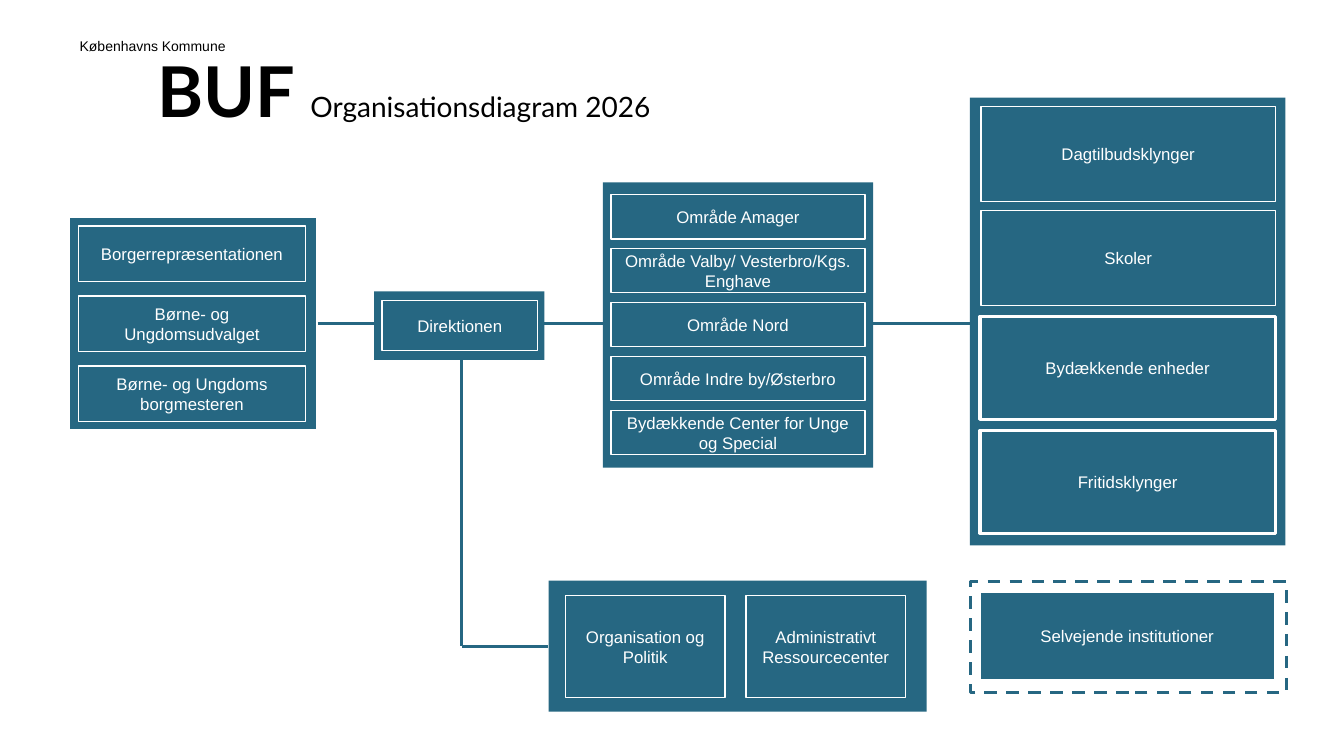
from lxml.etree import SubElement
from pptx import Presentation
from pptx.dml.color import RGBColor
from pptx.enum.dml import MSO_LINE
from pptx.enum.shapes import MSO_CONNECTOR, MSO_SHAPE
from pptx.enum.text import MSO_ANCHOR, PP_ALIGN
from pptx.oxml.ns import qn
from pptx.util import Emu, Pt

PX = 9144  # 100 px to the inch
TEAL = RGBColor(0x26, 0x67, 0x82)
WHITE = RGBColor(0xFF, 0xFF, 0xFF)
BLACK = RGBColor(0, 0, 0)


def px(*lengths):
    return [Emu(round(length * PX)) for length in lengths]


def add_box(slide, box, fill=TEAL, line=None, weight=1):
    rect = slide.shapes.add_shape(MSO_SHAPE.RECTANGLE, *px(*box))
    rect.shadow.inherit = False
    if fill is None:
        rect.fill.background()
    else:
        rect.fill.solid()
        rect.fill.fore_color.rgb = fill
    if line is None:
        rect.line.fill.background()
    else:
        rect.line.color.rgb = line
        rect.line.width = Pt(weight)
    return rect


def add_units(slide, box, size, labels, weight=1):
    """Spread equal labelled boxes evenly from one corner of box to the other."""
    left, top, width, height = box
    unit_width, unit_height = size
    gaps = max(len(labels) - 1, 1)
    step_x = (width - unit_width) / gaps
    step_y = (height - unit_height) / gaps
    for i, label in enumerate(labels):
        place = (left + i * step_x, top + i * step_y, unit_width, unit_height)
        unit = add_box(slide, place, line=WHITE, weight=weight)
        frame = unit.text_frame
        frame.word_wrap = True
        frame.vertical_anchor = MSO_ANCHOR.MIDDLE
        paragraph = frame.paragraphs[0]
        paragraph.text = label
        paragraph.alignment = PP_ALIGN.CENTER
        paragraph.font.name = "Arial"
        paragraph.font.size = Pt(12)
        paragraph.font.color.rgb = WHITE


def add_link(slide, start, end):
    link = slide.shapes.add_connector(MSO_CONNECTOR.STRAIGHT, *px(*start, *end))
    link.line.color.rgb = TEAL
    link.line.width = Pt(2.25)
    SubElement(link._element.spPr, qn("a:effectLst"))
    return link


def add_heading(slide, box, anchor, runs):
    frame = slide.shapes.add_textbox(*px(*box)).text_frame
    frame.margin_left = frame.margin_right = 0
    frame.margin_top = frame.margin_bottom = 0
    frame.word_wrap = True
    frame.vertical_anchor = anchor
    paragraph = frame.paragraphs[0]
    for text, font, size, bold in runs:
        run = paragraph.add_run()
        run.text = text
        run.font.name = font
        run.font.size = Pt(size)
        run.font.bold = bold
        run.font.color.rgb = BLACK
    return paragraph


def add_headings(slide, left, top):
    add_heading(slide, (left, top, 385, 20), MSO_ANCHOR.BOTTOM,
                [("Københavns Kommune", "Arial", 10, False)])
    title = add_heading(slide, (left + 77, top + 23, 1022, 74), MSO_ANCHOR.MIDDLE,
                        [("BUF ", "Lato", 50, True),
                         ("Organisationsdiagram 2026", "Lato", 20, False)])
    title.line_spacing = 0.91


def add_political_level(slide, left, top):
    panel = add_box(slide, (left, top, 247, 212), line=WHITE, weight=2.25)
    add_units(slide, (left + 10, top + 9, 225, 194), (225, 55),
              ["Borgerrepræsentationen", "Børne- og Ungdomsudvalget",
               "Børne- og Ungdoms borgmesteren"])
    return panel


def add_management(slide, left, top):
    add_box(slide, (left, top, 169, 68))
    add_units(slide, (left + 8, top + 9, 154, 50), (154, 50), ["Direktionen"])


def add_areas(slide, left, top):
    add_box(slide, (left, top, 268, 283))
    add_units(slide, (left + 8, top + 12, 252, 258), (252, 44),
              ["Område Amager", "Område Valby/ Vesterbro/Kgs. Enghave",
               "Område Nord", "Område Indre by/Østerbro",
               "Bydækkende Center for Unge og Special"])


def add_staff(slide, left, top):
    panel = add_box(slide, (left, top, 375, 130))
    add_units(slide, (left + 17, top + 15, 337, 101), (158, 101),
              ["Organisation og Politik", "Administrativt Ressourcecenter"])
    return panel


def add_institutions(slide, left, top):
    add_box(slide, (left, top, 313, 444))
    add_units(slide, (left + 11, top + 9, 292, 197), (292, 94),
              ["Dagtilbudsklynger", "Skoler"])
    add_units(slide, (left + 10, top + 217, 293, 215), (293, 102),
              ["Bydækkende enheder", "Fritidsklynger"], weight=2.25)


def add_independent(slide, left, top):
    add_units(slide, (left + 9, top + 11, 292, 86), (292, 86),
              ["Selvejende institutioner"])
    frame = add_box(slide, (left, top, 313, 110), fill=None, line=TEAL, weight=2.25)
    frame.line.dash_style = MSO_LINE.DASH


def main():
    presentation = Presentation()
    presentation.slide_width, presentation.slide_height = px(1333, 750)
    slide = presentation.slides.add_slide(presentation.slide_layouts[6])

    add_headings(slide, 79, 34)
    political_level = add_political_level(slide, 68, 215)
    main_link = add_link(slide, (315, 321), (971, 321))
    main_link.begin_connect(political_level, 3)
    add_link(slide, (458, 348), (458, 641))
    add_institutions(slide, 962, 97)
    add_independent(slide, 963, 577)
    add_areas(slide, 598, 181)
    staff = add_staff(slide, 544, 576)
    staff_link = add_link(slide, (458, 641), (544, 641))
    staff_link.end_connect(staff, 1)
    add_management(slide, 371, 289)

    presentation.save("out.pptx")


if __name__ == "__main__":
    main()
